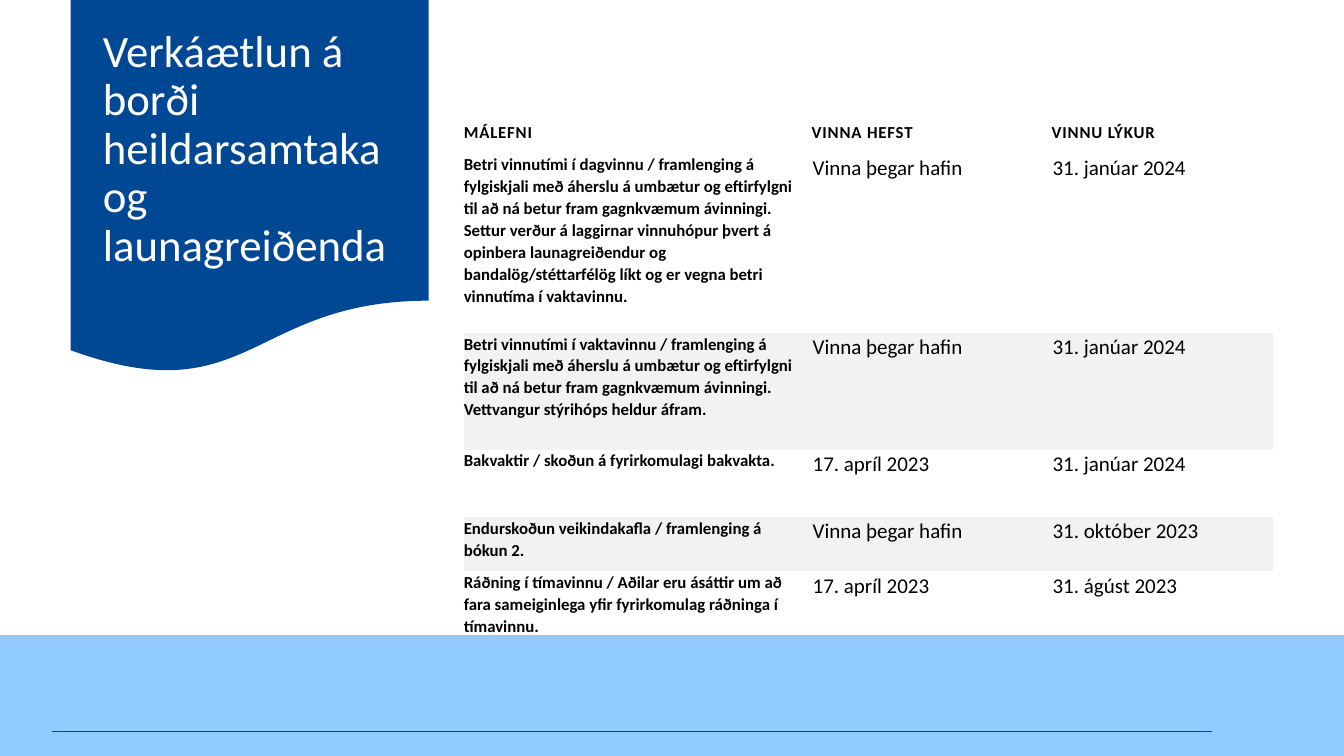
from dataclasses import dataclass

from lxml import etree
from pptx import Presentation
from pptx import util as u
from pptx.dml.color import RGBColor
from pptx.enum import shapes, text
from pptx.oxml.ns import qn


@dataclass(frozen=True)
class Theme:
    """Colours, type sizes and font of the slide."""

    navy: RGBColor = RGBColor(0x00, 0x47, 0x94)
    sky: RGBColor = RGBColor(0x91, 0xCA, 0xFF)
    stripe: RGBColor = RGBColor(0xF2, 0xF2, 0xF2)
    white: RGBColor = RGBColor(0xFF, 0xFF, 0xFF)
    black: RGBColor = RGBColor(0, 0, 0)
    font: str = "Calibri"
    title: u.Pt = u.Pt(32)
    topic: u.Pt = u.Pt(12)
    date: u.Pt = u.Pt(15)


THEME = Theme()
NO_STYLE = "{2D5ABB26-0587-4C30-8999-92F81FD0307C}"
COLUMNS = [3.35, 2.38, 2.3]
ROWS = [0.43, 1.78, 1.16, 0.67, 0.54, 0.74]
STARTED = "Vinna þegar hafin"
PLAN = [
    ("MÁLEFNI", "VINNA HEFST", "VINNU LÝKUR"),
    ("Betri vinnutími í dagvinnu / framlenging á fylgiskjali með áherslu á umbætur "
     "og eftirfylgni til að ná betur fram gagnkvæmum ávinningi.\n"
     "Settur verður á laggirnar vinnuhópur þvert á opinbera launagreiðendur og "
     "bandalög/stéttarfélög líkt og er vegna betri vinnutíma í vaktavinnu.",
     STARTED, "31. janúar 2024"),
    ("Betri vinnutími í vaktavinnu / framlenging á fylgiskjali með áherslu á umbætur "
     "og eftirfylgni til að ná betur fram gagnkvæmum ávinningi.\n"
     "Vettvangur stýrihóps heldur áfram.",
     STARTED, "31. janúar 2024"),
    ("Bakvaktir / skoðun á fyrirkomulagi bakvakta.", "17. apríl 2023", "31. janúar 2024"),
    ("Endurskoðun veikindakafla / framlenging á bókun 2.", STARTED, "31. október 2023"),
    ("Ráðning í tímavinnu / Aðilar eru ásáttir um að fara sameiginlega yfir "
     "fyrirkomulag ráðninga í tímavinnu.", "17. apríl 2023", "31. ágúst 2023"),
]


def apply(target, formats):
    """Set each attribute in the dict on the target."""
    for name, value in formats.items():
        setattr(target, name, value)


def write(paragraph, words, font, **layout):
    """Write one paragraph with its font and paragraph formats."""
    paragraph.text = words
    apply(paragraph, layout)
    for run in paragraph.runs:
        apply(run.font, {"name": THEME.font, "size": font["size"], "bold": font["bold"]})
        run.font.color.rgb = font["color"]


def add_block(slide, preset, color, left, top, width, height):
    """Add a plain filled shape in the given box."""
    block = slide.shapes.add_shape(preset, *map(u.Inches, (left, top, width, height)))
    block.shadow.inherit = False
    block.fill.solid()
    block.fill.fore_color.rgb = color
    block.line.fill.background()
    return block


def add_footer(slide, left, top, width, height):
    """Add the pale band with its thin rule."""
    add_block(slide, shapes.MSO_SHAPE.RECTANGLE, THEME.sky, left, top, width, height)
    rule_y = u.Inches(top + 0.96)
    rule = slide.shapes.add_connector(shapes.MSO_CONNECTOR.STRAIGHT, u.Inches(left + 0.52),
                                      rule_y, u.Inches(left + 12.02), rule_y)
    rule.line.color.rgb = THEME.navy
    rule.line.width = u.Pt(0.5)
    etree.SubElement(rule.element.spPr, qn("a:effectLst"))


def add_title_panel(slide, left, top, width, height):
    """Add the waved panel and set the title on it."""
    panel = add_block(slide, shapes.MSO_SHAPE.FLOWCHART_DOCUMENT, THEME.navy,
                      left, top, width, height)
    title = slide.shapes.title
    panel.element.addnext(title.element)
    apply(title, {"left": u.Inches(left + 0.22), "top": u.Inches(top + 0.19),
                  "width": u.Inches(width - 0.44), "height": u.Inches(2.59)})
    apply(title.text_frame, {"word_wrap": True, "auto_size": text.MSO_AUTO_SIZE.NONE,
                             "vertical_anchor": text.MSO_ANCHOR.MIDDLE})
    write(title.text_frame.paragraphs[0],
          "Verkáætlun á borði heildarsamtaka og launagreiðenda",
          {"size": THEME.title, "bold": False, "color": THEME.white},
          alignment=text.PP_ALIGN.LEFT, line_spacing=0.9)


def fill_cell(cell, words, row, column):
    """Format one cell of the plan by its row and column."""
    header, topic = row == 0, column == 0
    apply(cell, {"margin_left": u.Inches(0 if topic else 0.1 if header else 0.11),
                 "margin_top": u.Inches(0.1 if header else 0),
                 "margin_right": 0, "margin_bottom": u.Inches(0.1),
                 "vertical_anchor": text.MSO_ANCHOR.BOTTOM if header else text.MSO_ANCHOR.TOP})
    if row in (2, 4):
        cell.fill.solid()
        cell.fill.fore_color.rgb = THEME.stripe
    else:
        cell.fill.background()
    strong = header or topic
    write(cell.text_frame.paragraphs[0], words,
          {"size": THEME.topic if strong else THEME.date, "bold": strong, "color": THEME.black},
          line_spacing=1.07, space_after=u.Pt(8))


def add_plan(slide, left, top):
    """Add the table of topics with their start and end dates."""
    frame = slide.shapes.add_table(len(ROWS), len(COLUMNS), u.Inches(left), u.Inches(top),
                                   u.Inches(sum(COLUMNS)), u.Inches(sum(ROWS)))
    plan = frame.table
    plan.horz_banding = False
    for column, width in zip(plan.columns, COLUMNS):
        column.width = u.Inches(width)
    for row, height in zip(plan.rows, ROWS):
        row.height = u.Inches(height)
    for row, entries in enumerate(PLAN):
        for column, words in enumerate(entries):
            fill_cell(plan.cell(row, column), words, row, column)
    for style in frame.element.iter(qn("a:tableStyleId")):
        style.text = NO_STYLE
    for line_break in frame.element.iter(qn("a:br")):
        etree.SubElement(line_break, qn("a:rPr"), sz=str(int(THEME.topic.pt * 100)), b="1")
    header = next(frame.element.iter(qn("a:tr")))
    for run_format in header.iter(qn("a:rPr")):
        run_format.set("spc", "60")


def main():
    """Build the slide and save it."""
    deck = Presentation()
    apply(deck, {"slide_width": u.Inches(13.33), "slide_height": u.Inches(7.5)})
    slide = deck.slides.add_slide(deck.slide_layouts[5])
    add_footer(slide, 0, 6.3, 13.33, 1.2)
    add_title_panel(slide, 0.7, 0, 3.55, 3.72)
    add_plan(slide, 4.6, 1.09)
    deck.save("out.pptx")


if __name__ == "__main__":
    main()
